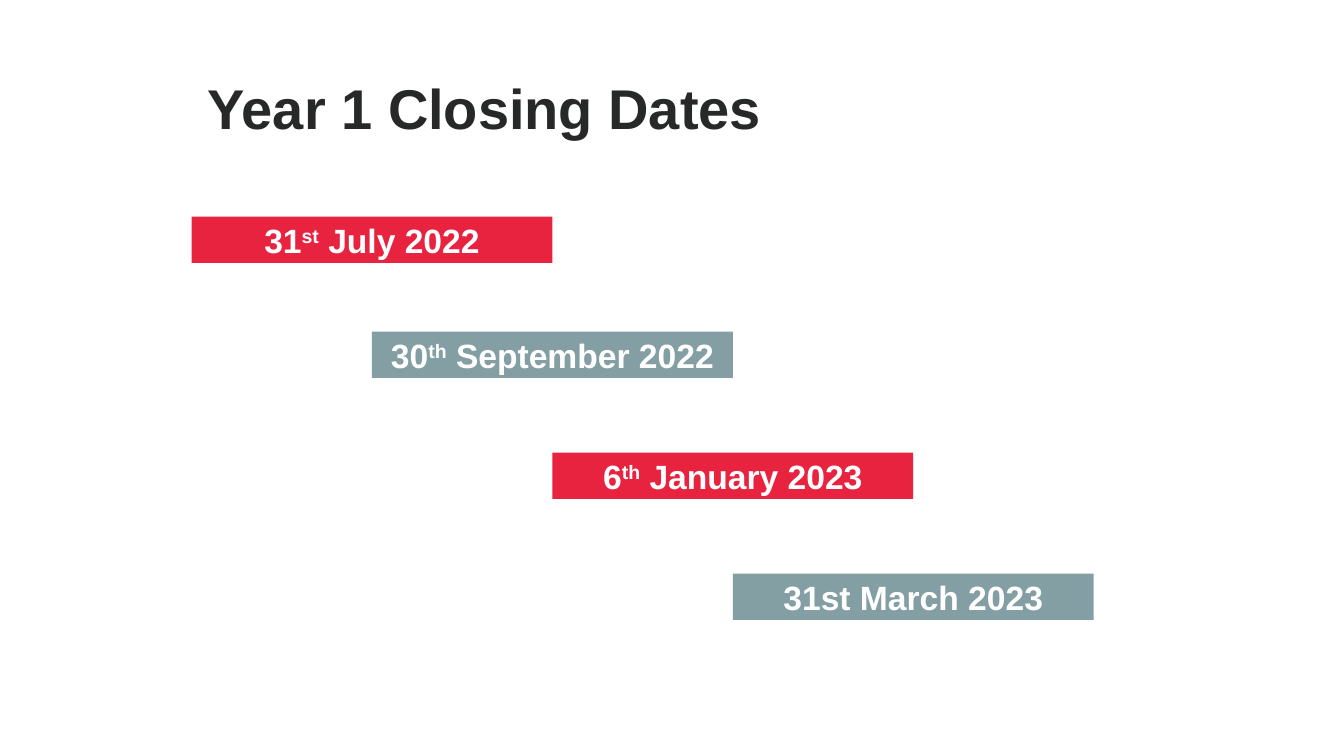
from dataclasses import dataclass

from pptx import Presentation
from pptx.dml.color import RGBColor
from pptx.enum.shapes import MSO_SHAPE
from pptx.enum.text import MSO_ANCHOR, MSO_AUTO_SIZE, PP_ALIGN
from pptx.slide import Slide
from pptx.text.text import Font
from pptx.util import Pt

COLORS = {"ink": "272928", "red": "E82340", "grey": "849FA4", "white": "FFFFFF"}
LEFT, BAR_W, BAR_H = 136.8, 257.76, 33.12


@dataclass
class ClosingDate:
    day: str
    ordinal: str
    month: str
    top: float


DATES = [
    ClosingDate("31", "st", " July 2022", 154.8),
    ClosingDate("30", "th", " September 2022", 236.88),
    ClosingDate("6", "th", " January 2023", 323.28),
    ClosingDate("31st March 2023", "", "", 409.68),
]


def style_font(font: Font, size: float, color: str) -> None:
    """Apply the bold Arial style of the slide."""
    font.name = "Arial"
    font.size = Pt(size)
    font.bold = True
    font.color.rgb = RGBColor.from_string(COLORS[color])


def add_title(s: Slide, text: str) -> None:
    """Place and format the slide title."""
    sp = s.shapes.title
    sp.left, sp.top, sp.width, sp.height = Pt(LEFT), Pt(57.6), Pt(757.44), Pt(43.92)
    tf = sp.text_frame
    tf.text = text
    tf.word_wrap = True
    tf.auto_size = MSO_AUTO_SIZE.SHAPE_TO_FIT_TEXT
    tf.vertical_anchor = MSO_ANCHOR.MIDDLE
    tf.margin_left = tf.margin_right = Pt(11.52)
    tf.margin_top = tf.margin_bottom = Pt(0)
    p = tf.paragraphs[0]
    p.alignment = PP_ALIGN.LEFT
    p.line_spacing = 0.9
    style_font(p.runs[0].font, 40, "ink")


def add_date_bar(s: Slide, index: int, date: ClosingDate) -> None:
    """Draw one date bar, half a bar further right than the one above."""
    sp = s.shapes.add_shape(
        MSO_SHAPE.RECTANGLE, Pt(LEFT + index * BAR_W / 2), Pt(date.top), Pt(BAR_W), Pt(BAR_H)
    )
    sp.shadow.inherit = False
    sp.fill.solid()
    sp.fill.fore_color.rgb = RGBColor.from_string(COLORS["grey" if index % 2 else "red"])
    sp.line.fill.background()
    tf = sp.text_frame
    tf.word_wrap = True
    tf.vertical_anchor = MSO_ANCHOR.MIDDLE
    p = tf.paragraphs[0]
    p.alignment = PP_ALIGN.CENTER
    for text in filter(None, (date.day, date.ordinal, date.month)):
        r = p.add_run()
        r.text = text
        style_font(r.font, 24, "white")
        if text == date.ordinal:
            r._r.get_or_add_rPr().set("baseline", "30000")


def main() -> None:
    """Build and save the slide."""
    prs = Presentation()
    prs.slide_width, prs.slide_height = Pt(960), Pt(540)
    s = prs.slides.add_slide(prs.slide_layouts[5])
    add_title(s, "Year 1 Closing Dates")
    for index, date in enumerate(DATES):
        add_date_bar(s, index, date)
    prs.save("out.pptx")


if __name__ == "__main__":
    main()
